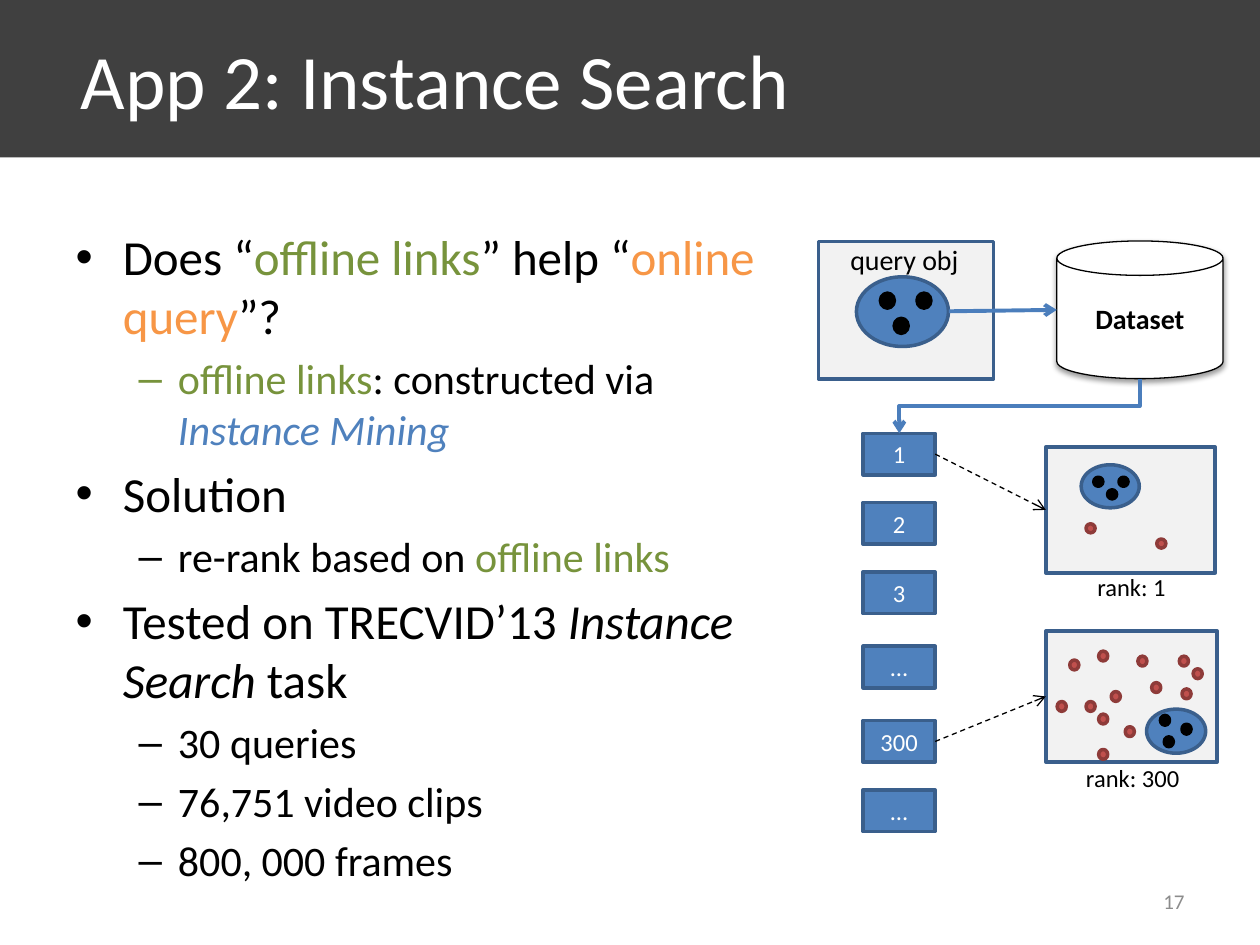
from lxml import etree
from pptx import Presentation
from pptx.dml.color import RGBColor as Rgb
from pptx.enum import dml, shapes, text
from pptx.oxml import ns
from pptx.util import Pt

FONT = "Calibri"
WHITE = Rgb(0xFF, 0xFF, 0xFF)
BLACK = Rgb(0, 0, 0)
DARK = Rgb(0x40, 0x40, 0x40)
PALE = Rgb(0xF2, 0xF2, 0xF2)
GRAY = Rgb(0x8C, 0x8C, 0x8C)
BLUE = Rgb(0x4F, 0x81, 0xBD)
EDGE = Rgb(0x3A, 0x5F, 0x8C)
ARROW = Rgb(0x4B, 0x7E, 0xBC)
RED = Rgb(0xC0, 0x50, 0x4D)
RUST = Rgb(0x8E, 0x3B, 0x39)
GREEN = Rgb(0x77, 0x93, 0x3C)
ORANGE = Rgb(0xF7, 0x96, 0x46)

KIND = shapes.MSO_SHAPE
LINK = shapes.MSO_CONNECTOR
MID = text.MSO_ANCHOR.MIDDLE
ALIGN = text.PP_ALIGN

# Each item: level, then runs of (words, colour, italic)
ITEMS = [
    (0, [("Does “", BLACK, False), ("offline links", GREEN, False),
         ("” help “", BLACK, False), ("online query", ORANGE, False),
         ("”?", BLACK, False)]),
    (1, [("offline links", GREEN, False), (": constructed via ", BLACK, False),
         ("Instance Mining", BLUE, True)]),
    (0, [("Solution", BLACK, False)]),
    (1, [("re-rank based on ", BLACK, False), ("offline links", GREEN, False)]),
    (0, [("Tested on TRECVID’13 ", BLACK, False),
         ("Instance Search", BLACK, True), (" task", BLACK, False)]),
    (1, [("30 queries", BLACK, False)]),
    (1, [("76,751 video clips", BLACK, False)]),
    (1, [("800, 000 frames", BLACK, False)]),
]

# Dot positions, measured from the corner of their frame
QUERY = [(35.3, 29.5), (43.2, 43.9), (56.2, 29.5)]
NEAR = [(27.4, 17.3), (35.3, 24.5), (41.8, 17.3)]
FAR = [(65.5, 48.2), (77.8, 53.3), (67.7, 60.5)]
FEW = [(23, 43.9), (63.4, 52.6)]
MANY = [(23, 40.3), (6.5, 40.3), (13.7, 16.6), (30.2, 47.5), (45.4, 54.7),
        (30.2, 67.7), (84.2, 21.6), (77.8, 33.1), (37.4, 34.6), (30.2, 11.5),
        (52.6, 14.4), (60.5, 29.5), (76.3, 14.4)]

RANKS = ["1", "2", "3", "…", "300", "…"]
DROPS = [0, 39.6, 79.2, 121.7, 164.2, 203.8]


def place(item, box):
    item.left, item.top, item.width, item.height = map(Pt, box)


def write(para, words, size, color, bold=False, slant=False):
    run = para.add_run()
    run.text = words
    font = run.font
    font.name, font.size = FONT, Pt(size)
    font.bold, font.italic = bold, slant
    font.color.rgb = color


def shape(tree, kind, box, fill, edge, width=2):
    item = tree.add_shape(kind, *map(Pt, box))
    item.shadow.inherit = False
    item.fill.solid()
    item.fill.fore_color.rgb = fill
    item.line.color.rgb = edge
    item.line.width = Pt(width)
    return item


def label(item, words, size, color, align=ALIGN.CENTER, bold=False):
    frame = item.text_frame
    frame.vertical_anchor = MID
    frame.paragraphs[0].alignment = align
    write(frame.paragraphs[0], words, size, color, bold)


def note(tree, box, words, size, color, align=ALIGN.CENTER):
    item = tree.add_textbox(*map(Pt, box))
    item.text_frame.word_wrap = True
    label(item, words, size, color, align)


def arrow(tree, kind, ends, color, width):
    item = tree.add_connector(kind, *map(Pt, ends))
    item.line.color.rgb = color
    item.line.width = Pt(width)
    etree.SubElement(item.line._get_or_add_ln(), ns.qn("a:tailEnd"), type="arrow")
    etree.SubElement(item._element.spPr, ns.qn("a:effectLst"))
    return item


def header(slide, box):
    title = slide.shapes.title
    place(title, box)
    title.fill.solid()
    title.fill.fore_color.rgb = DARK
    title.text_frame.margin_left = Pt(46)
    label(title, "App 2: Instance Search", 44, WHITE, ALIGN.LEFT)


def points(slide, box):
    body = slide.placeholders[1]
    place(body, box)
    frame = body.text_frame
    frame.auto_size = text.MSO_AUTO_SIZE.NONE
    for n, (level, runs) in enumerate(ITEMS):
        para = frame.add_paragraph() if n else frame.paragraphs[0]
        para.level = level
        if n == 0:
            para.space_before = Pt(0)
        for words, color, slant in runs:
            write(para, words, 24 if level else 28, color, slant=slant)


def panel(slide, box, oval, eyes, spots, dot, words, size, tag):
    """Image frame with an object, loose feature spots and a caption."""
    tree = slide.shapes.add_group_shape().shapes
    x, y = box[:2]

    def inner(left, top, wide, high):
        return x + left, y + top, wide, high

    frame = shape(tree, KIND.RECTANGLE, box, PALE, EDGE)
    note(tree, inner(*tag), words, size, BLACK)
    shape(tree, KIND.OVAL, inner(*oval), BLUE, EDGE)
    for group, fill, edge in ((eyes, BLACK, BLACK), (spots, RED, RUST)):
        for spot in group:
            shape(tree, KIND.FLOWCHART_CONNECTOR, inner(*spot, *dot), fill, edge)
    return frame


def store(slide, box):
    """Dataset cylinder with a soft shadow below."""
    can = shape(slide.shapes, KIND.CAN, box, WHITE, BLACK, 0.75)
    label(can, "Dataset", 16, BLACK, bold=True)
    effect = can._element.spPr.find(ns.qn("a:effectLst"))
    cast = etree.SubElement(effect, ns.qn("a:outerShdw"), blurRad=str(Pt(3.1)),
                            dist=str(Pt(1.6)), dir="5400000", rotWithShape="0")
    tint = etree.SubElement(cast, ns.qn("a:srgbClr"), val=str(BLACK))
    etree.SubElement(tint, ns.qn("a:alpha"), val="38000")


def ranking(slide, x, y, wide, high):
    tree = slide.shapes.add_group_shape().shapes
    cells = []
    for words, drop in zip(RANKS, DROPS):
        cell = shape(tree, KIND.RECTANGLE, (x, y + drop, wide, high), BLUE, EDGE)
        label(cell, words, 14, WHITE)
        cells.append(cell)
    return cells


def main():
    prs = Presentation()
    prs.slide_width, prs.slide_height = Pt(720), Pt(540)
    slide = prs.slides.add_slide(prs.slide_layouts[1])
    tree = slide.shapes

    # Title and list
    header(slide, (0, 0, 720, 90))
    points(slide, (36, 126, 414.7, 356.4))

    # Query, results and dataset
    panel(slide, (467.8, 138, 100, 78.6), (21.6, 20.2, 52.6, 39.8), QUERY, [],
          (8, 8.6), "query obj", 16, (6, -2.9, 86, 26.6))
    last = panel(slide, (597.6, 360.6, 98, 74.8), (57.6, 44.6, 33.8, 25.2), FAR,
                 MANY, (5.2, 5.6), "rank: 300", 14, (11.5, 71.3, 76.3, 24.5))
    first = panel(slide, (597.6, 255.4, 96.8, 72), (20.2, 10.2, 33.2, 24.6), NEAR,
                  FEW, (5.2, 5.2), "rank: 1", 14, (13.7, 67.7, 70.6, 24.5))
    store(slide, (603.9, 137.7, 95, 78.7))
    cells = ranking(slide, 493.2, 247.6, 41.2, 23.8)

    # Solid arrows through the dataset, the bent one turned a quarter
    arrow(tree, LINK.STRAIGHT, (542.2, 177.9, 603.9, 177.1), ARROW, 2.25)
    bent = arrow(tree, LINK.ELBOW, (567, 163.3, 598.2, 300.7), ARROW, 2.25)
    bent._element.spPr.find(ns.qn("a:xfrm")).set("rot", "5400000")

    # Dashed arrows from a rank to its image
    for cell, frame in ((cells[0], first), (cells[4], last)):
        dash = arrow(tree, LINK.STRAIGHT, (0, 0, 1, 1), BLACK, 0.75)
        dash.line.dash_style = dml.MSO_LINE.DASH
        dash.begin_connect(cell, 3)
        dash.end_connect(frame, 1)

    # Page number
    note(tree, (516, 500.5, 168, 28.8), "17", 12, GRAY, ALIGN.RIGHT)
    prs.save("out.pptx")


if __name__ == "__main__":
    main()
